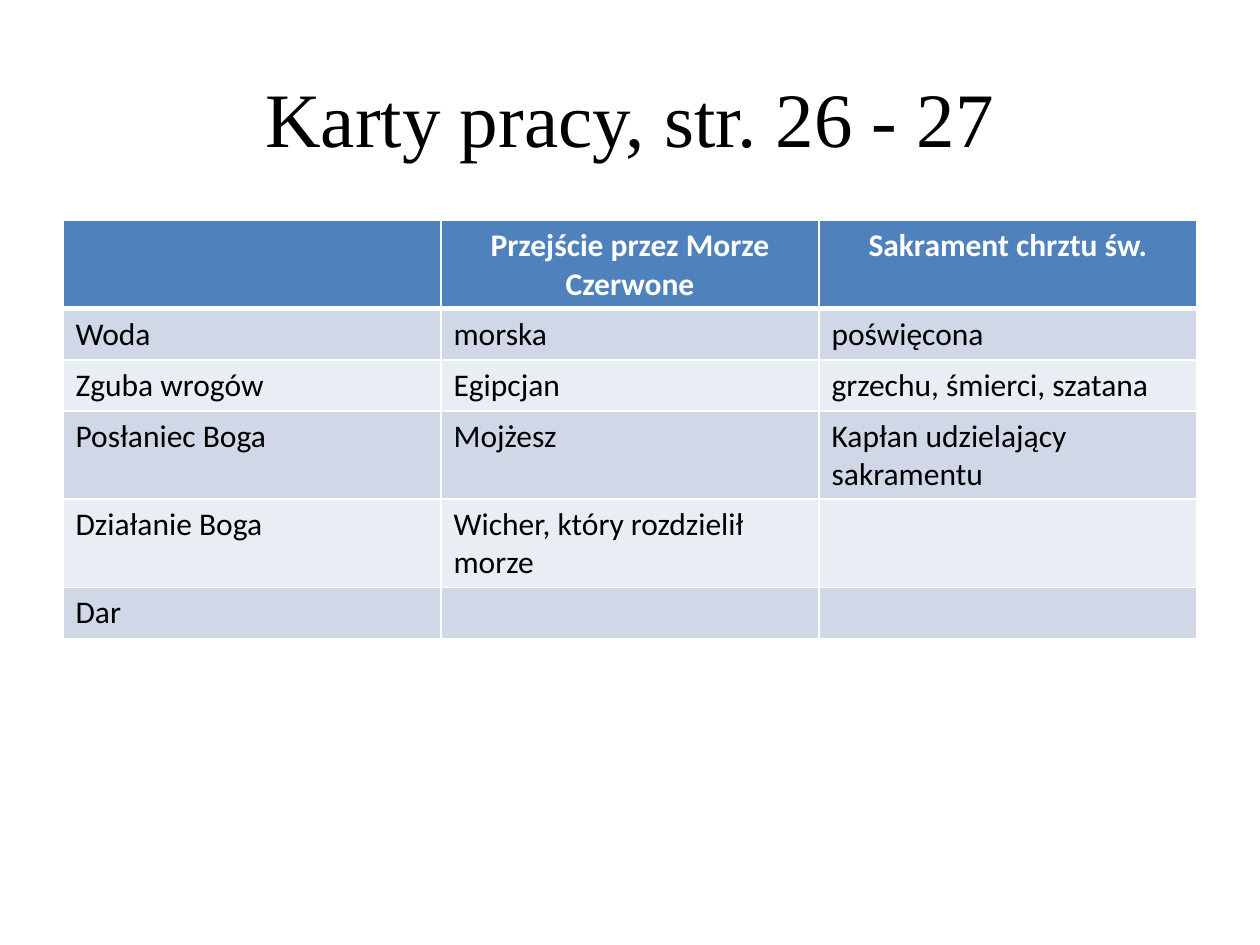
from lxml import etree
from pptx import Presentation
from pptx.dml.color import RGBColor
from pptx.enum.text import MSO_ANCHOR, PP_ALIGN
from pptx.oxml.ns import qn
from pptx.util import Pt

CENTER, LEFT = PP_ALIGN.CENTER, PP_ALIGN.LEFT
MIDDLE = MSO_ANCHOR.MIDDLE
HEADER_FILL, BAND_FILLS = "4F81BD", ("D0D8E8", "E9EDF4")
WHITE, BLACK = "FFFFFF", "000000"
ROW_HEIGHT = 29.2

COMPARISON = [
    ("", "Przejście przez Morze Czerwone", "Sakrament chrztu św."),
    ("Woda", "morska", "poświęcona"),
    ("Zguba wrogów", "Egipcjan", "grzechu, śmierci, szatana"),
    ("Posłaniec Boga", "Mojżesz", "Kapłan udzielający sakramentu"),
    ("Działanie Boga", "Wicher, który rozdzielił morze", ""),
    ("Dar", "", ""),
]


def rgb(value):
    """Turn a hex string into a colour."""
    return RGBColor.from_string(value)


def style_paragraph(paragraph, align, name, size, color, bold=False):
    """Set the alignment and font of a paragraph."""
    paragraph.alignment = align
    font = paragraph.font
    font.name, font.size, font.bold = name, Pt(size), bold
    font.color.rgb = rgb(color)


def set_borders(cell, widths):
    """Draw white cell borders with the given width for each side."""
    properties = cell._tc.get_or_add_tcPr()
    for side, width in widths.items():
        line = etree.SubElement(properties, qn(f"a:ln{side}"), w=str(Pt(width)))
        fill = etree.SubElement(line, qn("a:solidFill"))
        etree.SubElement(fill, qn("a:srgbClr"), val=WHITE)


def add_title(slide, left, top, width, height):
    """Place the centred heading in its box."""
    frame = slide.shapes.add_textbox(Pt(left), Pt(top), Pt(width), Pt(height)).text_frame
    frame.word_wrap = True
    frame.vertical_anchor = MIDDLE
    frame.text = "Karty pracy, str. 26 - 27"
    style_paragraph(frame.paragraphs[0], CENTER, "Times New Roman", 44, BLACK)


def add_comparison(slide, left, top, width):
    """Place the banded comparison table with equal columns."""
    row_count, column_count = len(COMPARISON), len(COMPARISON[0])
    table = slide.shapes.add_table(row_count, column_count, Pt(left), Pt(top),
                                   Pt(width), Pt(ROW_HEIGHT * row_count)).table
    for r, entries in enumerate(COMPARISON):
        header = r == 0
        for c, entry in enumerate(entries):
            cell = table.cell(r, c)
            set_borders(cell, {"L": 1, "R": 1, "T": 3 if r == 1 else 1, "B": 3 if header else 1})
            cell.fill.solid()
            cell.fill.fore_color.rgb = rgb(HEADER_FILL if header else BAND_FILLS[(r - 1) % 2])
            cell.text = entry
            style_paragraph(cell.text_frame.paragraphs[0], CENTER if header else LEFT,
                            "Calibri", 18, WHITE if header else BLACK, header)


def main():
    """Build and save the slide."""
    deck = Presentation()
    deck.slide_width, deck.slide_height = Pt(720), Pt(540)
    slide = deck.slides.add_slide(deck.slide_layouts[6])
    add_title(slide, 36, 21.6, 648, 90)
    add_comparison(slide, 36, 126, 648)
    deck.save("out.pptx")


if __name__ == "__main__":
    main()
